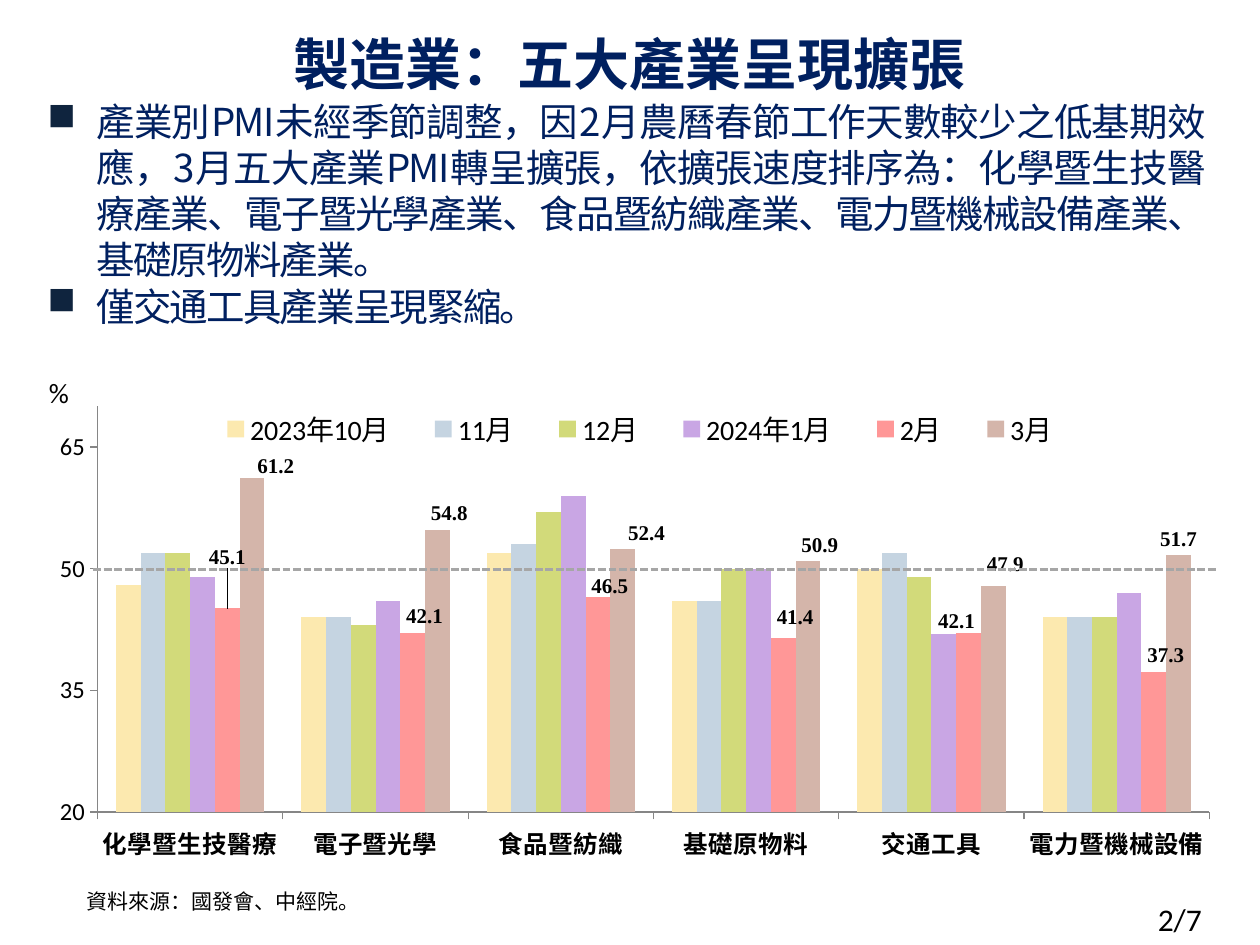
from lxml import etree
from pptx import Presentation
from pptx.chart.data import CategoryChartData
from pptx.dml.color import RGBColor
from pptx.enum.chart import XL_CHART_TYPE, XL_LABEL_POSITION, XL_LEGEND_POSITION, XL_TICK_MARK
from pptx.enum.dml import MSO_LINE
from pptx.enum.shapes import MSO_CONNECTOR, MSO_SHAPE
from pptx.enum.text import MSO_ANCHOR, PP_ALIGN
from pptx.oxml.ns import qn
from pptx.util import Inches, Pt

CJK = "Noto Sans CJK SC"
LATIN = "Calibri"
NAVY = "002060"
BLACK = "000000"

BULLETS = [
    "產業別PMI未經季節調整，因2月農曆春節工作天數較少之低基期效應，3月五大產業PMI轉呈擴張，"
    "依擴張速度排序為：化學暨生技醫療產業、電子暨光學產業、食品暨紡織產業、"
    "電力暨機械設備產業、基礎原物料產業。",
    "僅交通工具產業呈現緊縮。",
]
INDUSTRIES = ["化學暨生技醫療", "電子暨光學", "食品暨紡織", "基礎原物料", "交通工具", "電力暨機械設備"]
MONTHS = [
    ("2023年10月", "FCE9AF", [48, 44, 52, 46, 50, 44]),
    ("11月", "C5D4E1", [52, 44, 53, 46, 52, 44]),
    ("12月", "D2DA7A", [52, 43, 57, 50, 49, 44]),
    ("2024年1月", "C9A6E4", [49, 46, 59, 50, 42, 47]),
    ("2月", "FF9797", [45.1, 42.1, 46.5, 41.4, 42.1, 37.3]),
    ("3月", "D4B5AA", [61.2, 54.8, 52.4, 50.9, 47.9, 51.7]),
]
# Label shifts as fractions of the chart's width and height
LABEL_SHIFTS = {
    "2月": [(0, -0.07), (0.01, 0), (0.01, 0.01), (0.01, -0.01), (-0.01, 0.01), (0.01, 0)],
    "3月": [(0.02, 0.01), (0.01, 0), (0.02, 0), (0.01, 0), (0.01, -0.01), (0, 0)],
}


def color(hex_code):
    return RGBColor.from_string(hex_code)


def set_font(font, size, name, hex_code=BLACK, bold=False):
    font.size = Pt(size)
    font.bold = bold
    font.color.rgb = color(hex_code)
    font.name = name
    if "CJK" in name:
        font._element.find(qn("a:latin")).addnext(
            font._element.makeelement(qn("a:ea"), {"typeface": name}))


def add_text(slide, text, box, size, name=LATIN):
    frame = slide.shapes.add_textbox(*map(Inches, box)).text_frame
    frame.word_wrap = True
    paragraph = frame.paragraphs[0]
    paragraph.text = text
    set_font(paragraph.font, size, name)
    return paragraph


def add_title(slide, text):
    title = slide.shapes.title
    title.left, title.top, title.width, title.height = map(Inches, (0, -0.01, 10, 1))
    title.text_frame.vertical_anchor = MSO_ANCHOR.MIDDLE
    heading = title.text_frame.paragraphs[0]
    heading.text = text
    heading.alignment = PP_ALIGN.CENTER
    heading.line_spacing = Pt(40)
    set_font(heading.font, 32, CJK, NAVY, bold=True)


def add_bullets(slide, texts):
    panel = slide.shapes.add_shape(MSO_SHAPE.ROUNDED_RECTANGLE,
                                   *map(Inches, (0.06, 0.66, 9.71, 2.4)))
    panel.shadow.inherit = False
    panel.fill.background()
    panel.line.fill.background()
    frame = panel.text_frame
    frame.word_wrap = True
    frame.vertical_anchor = MSO_ANCHOR.TOP
    frame.margin_top = frame.margin_bottom = 0
    for index, text in enumerate(texts):
        paragraph = frame.add_paragraph() if index else frame.paragraphs[0]
        paragraph.text = text
        paragraph.alignment = PP_ALIGN.JUSTIFY
        paragraph.line_spacing = 1.0
        set_font(paragraph.font, 22, CJK, NAVY)
        paragraph.font._element.set("spc", "-100")
        add_square_bullet(paragraph)


def add_square_bullet(paragraph):
    properties = paragraph._p.get_or_add_pPr()
    properties.set("marL", str(Inches(0.49)))
    properties.set("indent", str(Inches(-0.39)))
    bullet_color = properties.makeelement(qn("a:buClr"), {})
    etree.SubElement(bullet_color, qn("a:srgbClr"), val="0F243E")
    bullet = properties.makeelement(qn("a:buChar"), {"char": "■"})
    defaults = properties.find(qn("a:defRPr"))
    defaults.addprevious(bullet_color)
    defaults.addprevious(bullet)


def manual_layout(parent, **settings):
    layout = parent.makeelement(qn("c:layout"), {})
    manual = etree.SubElement(layout, qn("c:manualLayout"))
    for tag, value in settings.items():
        etree.SubElement(manual, qn(f"c:{tag}"), val=str(value))
    return layout


def place_area(area, before, x, y, w, h, **target):
    """Fix a chart area, in fractions of the chart."""
    for old in area.findall(qn("c:layout")):
        area.remove(old)
    layout = manual_layout(area, **target, xMode="edge", yMode="edge", x=x, y=y, w=w, h=h)
    area.find(qn(before)).addnext(layout) if before else area.insert(0, layout)


def label_series(series, shifts):
    labels = series.data_labels
    labels.show_value = True
    labels.number_format = "0.0"
    labels.number_format_is_linked = False
    labels.position = XL_LABEL_POSITION.OUTSIDE_END
    set_font(labels.font, 12, "Times New Roman", bold=True)
    for index, (x, y) in enumerate(shifts):
        label = series.points[index].data_label
        set_font(label.font, 12, "Times New Roman", bold=True)
        label.position = XL_LABEL_POSITION.OUTSIDE_END
        element = label._get_or_add_dLbl()
        element.find(qn("c:idx")).addnext(manual_layout(element, x=x, y=y))


def format_axis(axis, name, bold=False):
    axis.has_major_gridlines = False
    axis.major_tick_mark = XL_TICK_MARK.OUTSIDE
    axis.minor_tick_mark = XL_TICK_MARK.NONE
    axis.format.line.color.rgb = color("868686")
    axis.format.line.width = Pt(0.75)
    set_font(axis.tick_labels.font, 14, name, bold=bold)


def add_pmi_chart(slide):
    data = CategoryChartData()
    data.categories = INDUSTRIES
    for month, _, values in MONTHS:
        data.add_series(month, values)
    chart = slide.shapes.add_chart(XL_CHART_TYPE.COLUMN_CLUSTERED,
                                   *map(Inches, (0.28, 2.93, 9.5, 3.96)), data).chart
    set_font(chart.font, 18, "Cabin")
    chart.has_title = False

    plot = chart.plots[0]
    plot.gap_width = 150
    plot.overlap = 0
    plot.vary_by_categories = False
    for series, (month, fill, _) in zip(plot.series, MONTHS):
        series.format.fill.solid()
        series.format.fill.fore_color.rgb = color(fill)
        if month in LABEL_SHIFTS:
            label_series(series, LABEL_SHIFTS[month])

    format_axis(chart.category_axis, CJK, bold=True)
    percent = chart.value_axis
    format_axis(percent, LATIN)
    percent.minimum_scale, percent.maximum_scale, percent.major_unit = 20, 70, 15
    percent.tick_labels.number_format = "0"
    percent.tick_labels.number_format_is_linked = False

    chart.has_legend = True
    legend = chart.legend
    legend.position = XL_LEGEND_POSITION.TOP
    legend.include_in_layout = False
    set_font(legend.font, 16, LATIN)
    place_area(legend._element, "c:legendPos", 0.13, 0.08, 0.75, 0.08)
    place_area(chart._chartSpace.chart.plotArea, None, 0.052, 0.075, 0.929, 0.813,
               layoutTarget="inner")


def add_threshold(slide):
    threshold = slide.shapes.add_connector(MSO_CONNECTOR.STRAIGHT,
                                           *map(Inches, (0.74, 4.52, 9.67, 4.52)))
    threshold.line.color.rgb = color("A6A6A6")
    threshold.line.width = Pt(1.5)
    threshold.line.dash_style = MSO_LINE.SQUARE_DOT
    etree.SubElement(threshold._element.spPr, qn("a:effectLst"))


def main():
    deck = Presentation()
    deck.slide_width, deck.slide_height = Inches(10), Inches(7.5)
    slide = deck.slides.add_slide(deck.slide_layouts[5])

    # Page number, chart and the 50 % threshold
    add_text(slide, "2/7", (9.09, 7.09, 0.91, 0.4), 18)
    add_pmi_chart(slide)
    add_threshold(slide)

    # Source note
    note = add_text(slide, "資料來源：國發會、中經院。", (0.59, 7.04, 9.79, 0.27), 12, "Noto Sans CJK JP")
    note.line_spacing = Pt(12)
    note.space_before = Pt(2)

    # Headline, findings and axis unit
    add_title(slide, "製造業：五大產業呈現擴張")
    add_bullets(slide, BULLETS)
    add_text(slide, "%", (0.29, 2.93, 0.63, 0.37), 16)

    deck.save("out.pptx")


if __name__ == "__main__":
    main()
